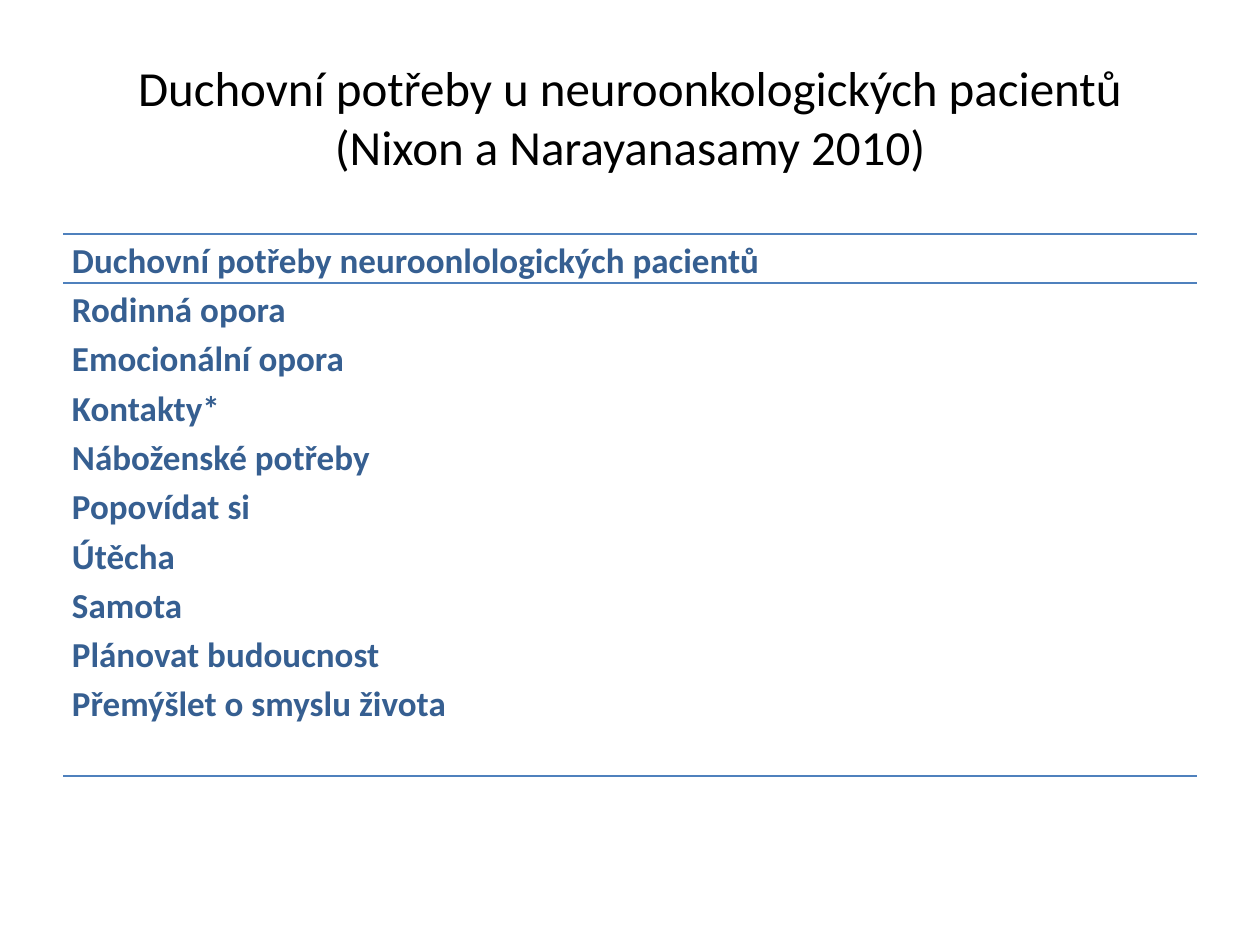
import pptx
import pptx.util
import pptx.dml.color
import pptx.enum.text
import pptx.oxml.ns
import lxml.etree

PX = 914400 // 126
COLORS = {"title": "000000", "text": "365F91", "line": "4F81BD"}
FONT = "Calibri"
HEADER = "Duchovní potřeby neuroonlologických pacientů"
NEEDS = [
    "Rodinná opora",
    "Emocionální opora",
    "Kontakty*",
    "Náboženské potřeby",
    "Popovídat si",
    "Útěcha",
    "Samota",
    "Plánovat budoucnost",
    "Přemýšlet o smyslu života",
]
COLUMN_WIDTHS = [726, 23, 193, 192]
ROW_HEIGHTS = [49, 493]


def add_span(para, text, size, color, bold=False):
    span = para.add_run()
    span.text = text
    span.font.name = FONT
    span.font.size = pptx.util.Pt(size)
    span.font.bold = bold
    span.font.color.rgb = pptx.dml.color.RGBColor.from_string(COLORS[color])


def set_borders(cell):
    properties = cell._tc.get_or_add_tcPr()
    qn = pptx.oxml.ns.qn
    for index, side in enumerate(["lnL", "lnR", "lnT", "lnB"]):
        line = lxml.etree.Element(qn("a:" + side), w=str(pptx.util.Pt(1)))
        if side in ("lnT", "lnB"):
            fill = lxml.etree.SubElement(line, qn("a:solidFill"))
            lxml.etree.SubElement(fill, qn("a:srgbClr"), val=COLORS["line"])
        else:
            lxml.etree.SubElement(line, qn("a:noFill"))
        properties.insert(index, line)


deck = pptx.Presentation()
deck.slide_width = pptx.util.Inches(10)
deck.slide_height = pptx.util.Inches(7.5)
page = deck.slides.add_slide(deck.slide_layouts[6])

box = page.shapes.add_textbox(63 * PX, 38 * PX, 1134 * PX, 157 * PX)
box.text_frame.word_wrap = True
box.text_frame.vertical_anchor = pptx.enum.text.MSO_ANCHOR.MIDDLE
para = box.text_frame.paragraphs[0]
para.alignment = pptx.enum.text.PP_ALIGN.CENTER
add_span(para, "Duchovní potřeby u neuroonkologických pacientů (Nixon a Narayanasamy 2010)", 28, "title")

frame = page.shapes.add_table(
    len(ROW_HEIGHTS), len(COLUMN_WIDTHS),
    63 * PX, 234 * PX, sum(COLUMN_WIDTHS) * PX, sum(ROW_HEIGHTS) * PX,
)
table = frame.table
table.first_row = False
table.horz_banding = False
for column, width in zip(table.columns, COLUMN_WIDTHS):
    column.width = width * PX
for row, height in zip(table.rows, ROW_HEIGHTS):
    row.height = height * PX

for cell in table.iter_cells():
    cell.margin_left = cell.margin_right = 9 * PX
    cell.margin_top = cell.margin_bottom = 0
    cell.fill.background()
    set_borders(cell)

for row_index, lines in enumerate([[HEADER], NEEDS]):
    text_frame = table.cell(row_index, 0).text_frame
    for line_index, text in enumerate(lines):
        para = text_frame.add_paragraph() if line_index else text_frame.paragraphs[0]
        para.line_spacing = 1.15
        add_span(para, text, 20, "text", bold=True)

deck.save("out.pptx")
